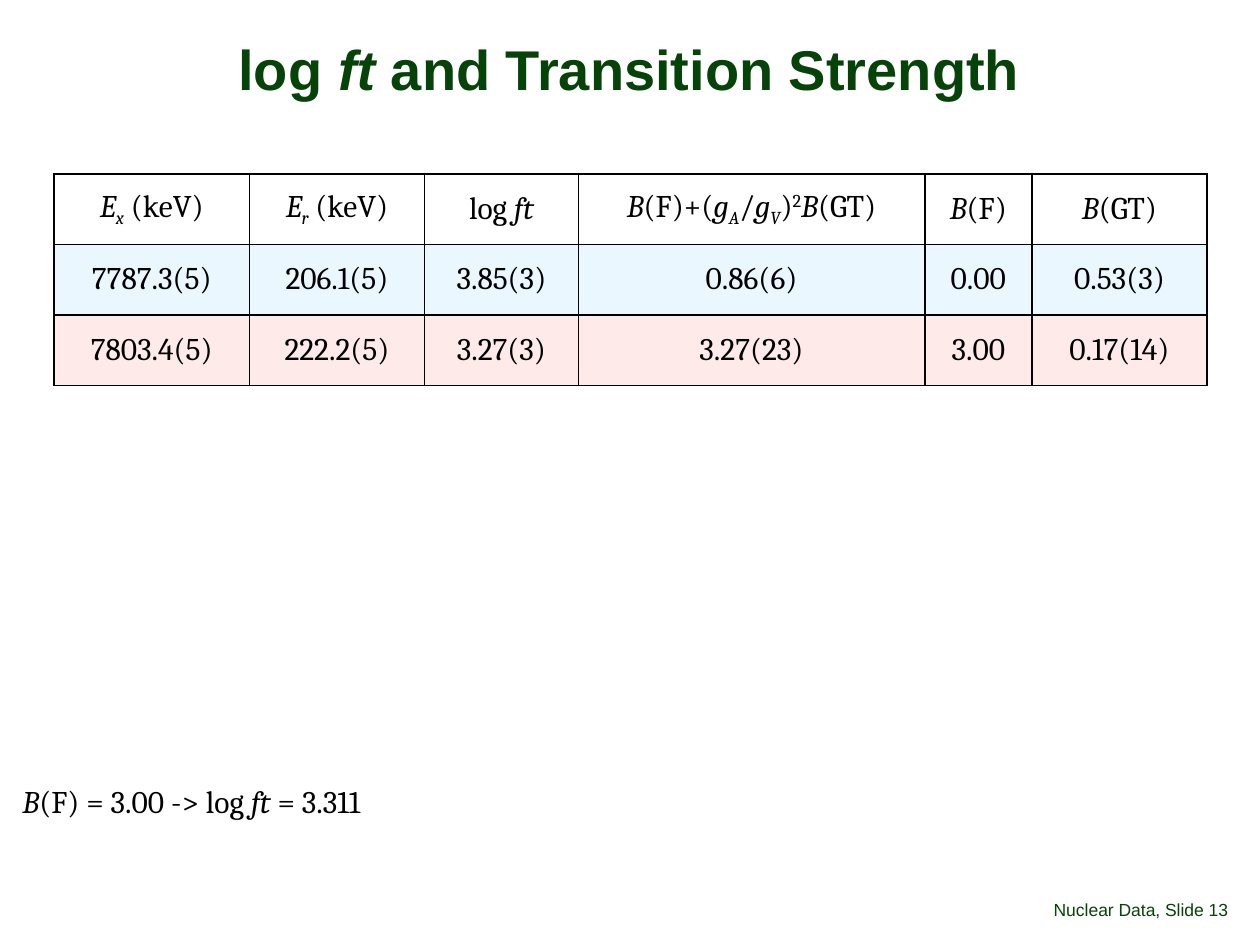
"""Build the slide on log ft and transition strength."""
from lxml import etree
from pptx import Presentation
from pptx.dml.color import RGBColor
from pptx.enum.text import MSO_ANCHOR, MSO_AUTO_SIZE, PP_ALIGN
from pptx.oxml.ns import qn
from pptx.util import Inches, Pt

CENTER, LEFT, RIGHT, JUSTIFY = PP_ALIGN.CENTER, PP_ALIGN.LEFT, PP_ALIGN.RIGHT, PP_ALIGN.JUSTIFY
MIDDLE, BOTTOM, TOP = MSO_ANCHOR.MIDDLE, MSO_ANCHOR.BOTTOM, MSO_ANCHOR.TOP
FIT_SHAPE = MSO_AUTO_SIZE.SHAPE_TO_FIT_TEXT

GREEN, BLACK = "064308", "000000"
BASELINES = {"sub": "-25000", "sup": "30000"}
ITALIC_STYLES = ("italic", "sub")

TITLE = [("log ", ""), ("ft", "italic"), (" and Transition Strength", "")]
NOTE = [("B", "italic"), ("(F) = 3.00 -> log ", ""), ("ft", "italic"), (" = 3.311", "")]
FOOTER = [("Nuclear Data", "")]
SLIDE_NUMBER = [(", Slide 13", "")]

HEADERS = [
    [("E", "italic"), ("x", "sub"), (" (keV)", "")],
    [("E", "italic"), ("r", "sub"), (" (keV)", "")],
    [("log ", ""), ("ft", "italic")],
    [("B", "italic"), ("(F)+(", ""), ("g", "italic"), ("A", "sub"), ("/", ""), ("g", "italic"),
     ("V", "sub"), (")", ""), ("2", "sup"), ("B", "italic"), ("(GT)", "")],
    [("B", "italic"), ("(F)", "")],
    [("B", "italic"), ("(GT)", "")],
]
LEVELS = [
    ("7787.3(5)", "206.1(5)", "3.85(3)", "0.86(6)", "0.00", "0.53(3)"),
    ("7803.4(5)", "222.2(5)", "3.27(3)", "3.27(23)", "3.00", "0.17(14)"),
]
ROW_FILLS = [None, "CCECFF", "FFCCCC"]
FILL_ALPHA = "40000"
COLUMN_WIDTHS = [1.55, 1.39, 1.22, 2.75, 0.85, 1.39]
ROW_HEIGHT = 0.56


def rgb(color):
    return RGBColor.from_string(color)


def write(paragraph, pieces, size, font, color, align, bold=False):
    paragraph.alignment = align
    for text, style in pieces:
        run = paragraph.add_run()
        run.text = text
        run.font.size, run.font.name = Pt(size), font
        run.font.bold, run.font.italic = bold, style in ITALIC_STYLES
        run.font.color.rgb = rgb(color)
        if style in BASELINES:
            run.font._element.set("baseline", BASELINES[style])


def add_text(slide, place, pieces, size, font, color, align, anchor,
             margins=(0.1, 0.05), spacing=None, bold=False, wrap=True, grow=False):
    frame = slide.shapes.add_textbox(*map(Inches, place)).text_frame
    frame.word_wrap = wrap
    frame.vertical_anchor = anchor
    frame.margin_left = frame.margin_right = Inches(margins[0])
    frame.margin_top = frame.margin_bottom = Inches(margins[1])
    if grow:
        frame.auto_size = FIT_SHAPE
    paragraph = frame.paragraphs[0]
    paragraph.line_spacing = spacing
    write(paragraph, pieces, size, font, color, align, bold)


def style_cell(cell, fill):
    properties = cell._tc.get_or_add_tcPr()
    for side in ("lnL", "lnR", "lnT", "lnB"):
        border = etree.SubElement(properties, qn(f"a:{side}"), w=str(Pt(1)))
        solid = etree.SubElement(border, qn("a:solidFill"))
        etree.SubElement(solid, qn("a:srgbClr"), val=BLACK)
    if fill is None:
        cell.fill.background()
        return
    cell.fill.solid()
    cell.fill.fore_color.rgb = rgb(fill)
    tint = properties.find(qn("a:solidFill")).find(qn("a:srgbClr"))
    etree.SubElement(tint, qn("a:alpha"), val=FILL_ALPHA)


def add_strength_table(slide):
    rows = [HEADERS] + [[[(value, "")] for value in level] for level in LEVELS]
    table = slide.shapes.add_table(
        len(rows), len(COLUMN_WIDTHS), Inches(0.43), Inches(1.38),
        Inches(sum(COLUMN_WIDTHS)), Inches(ROW_HEIGHT * len(rows))).table
    table.first_row = table.horz_banding = False
    for column, width in zip(table.columns, COLUMN_WIDTHS):
        column.width = Inches(width)
    for row, entries, fill in zip(table.rows, rows, ROW_FILLS):
        row.height = Inches(ROW_HEIGHT)
        for cell, pieces in zip(row.cells, entries):
            cell.vertical_anchor = MIDDLE
            style_cell(cell, fill)
            write(cell.text_frame.paragraphs[0], pieces, 18, "Cambria", BLACK, CENTER)


def main():
    deck = Presentation()
    deck.slide_width, deck.slide_height = Inches(10), Inches(7.5)
    slide = deck.slides.add_slide(deck.slide_layouts[6])
    add_text(slide, (0.08, 0.31, 9.83, 0.53), TITLE, 32, "Arial", GREEN, CENTER, MIDDLE,
             margins=(0.06, 0.02), spacing=0.88, bold=True, grow=True)
    for place, pieces, align in (((4.53, 6.95, 4.64, 0.4), FOOTER, RIGHT),
                                 ((9.17, 6.95, 0.83, 0.4), SLIDE_NUMBER, LEFT)):
        add_text(slide, place, pieces, 10, "Arial", GREEN, align, BOTTOM,
                 margins=(0, 0.05), spacing=0.9)
    add_strength_table(slide)
    add_text(slide, (0.08, 6.16, 3.15, 0.4), NOTE, 18, "Cambria", BLACK, JUSTIFY, TOP,
             wrap=False, grow=True)
    deck.save("out.pptx")


if __name__ == "__main__":
    main()
